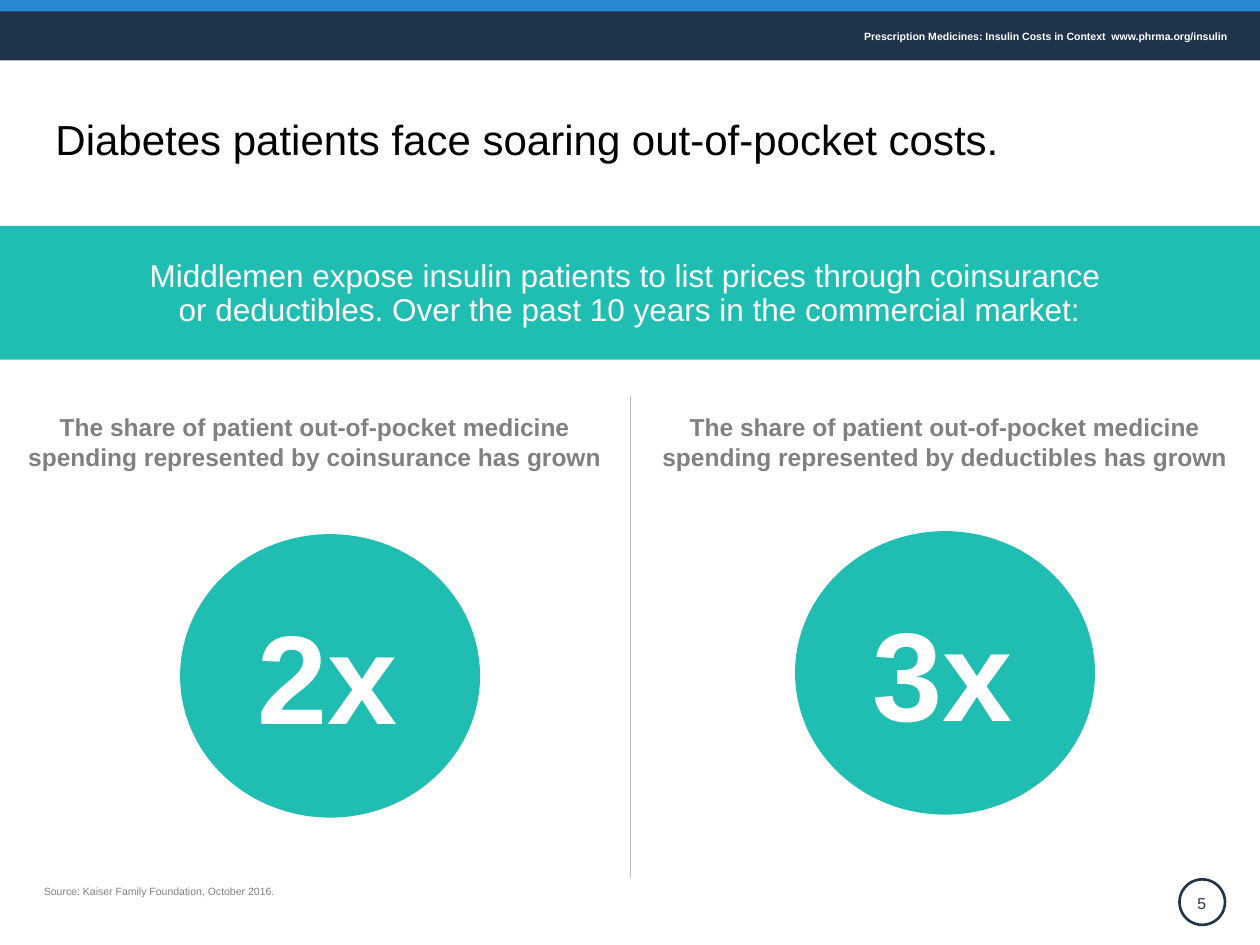
"""Build the slide on out-of-pocket insulin costs."""
import pptx
import pptx.dml.color
import pptx.enum.shapes
import pptx.enum.text
import pptx.oxml
import pptx.util

Pt = pptx.util.Pt
SHAPES = pptx.enum.shapes.MSO_SHAPE
ALIGN = pptx.enum.text.PP_ALIGN
ANCHOR = pptx.enum.text.MSO_ANCHOR

TEAL, NAVY, BLUE, WHITE, GREY = "20BDB3", "1F334A", "2B88D4", "FFFFFF", "808080"
WIDTH, HEIGHT = 720, 540
TITLE = "Diabetes patients face soaring out-of-pocket costs."
HEADER = "Prescription Medicines: Insulin Costs in Context  www.phrma.org/insulin"
MESSAGE = ("Middlemen expose insulin patients to list prices through coinsurance \n"
           "or deductibles. Over the past 10 years in the commercial market:")
SOURCE = "Source: Kaiser Family Foundation, October 2016."
BANDS = [(0, 8, BLUE), (6.5, 28, NAVY), (129, 76.5, TEAL)]
COLUMNS = [
    {"kind": "coinsurance", "growth": "2x", "circle": (102.9, 305.2)},
    {"kind": "deductibles", "growth": "3x", "circle": (454.3, 303.5)},
]
CIRCLE_WIDTH, CIRCLE_HEIGHT = 171.4, 162


def color(value):
    return pptx.dml.color.RGBColor.from_string(value)


def write(box, text, size=14, ink=GREY, bold=False, align=ALIGN.LEFT,
          anchor=ANCHOR.TOP, spacing=None):
    frame = box.text_frame
    frame.word_wrap = True
    frame.vertical_anchor = anchor
    para = frame.paragraphs[0]
    para.text = text
    para.alignment = align
    para.line_spacing = spacing
    for span in para.runs:
        span.font.name = "Arial"
        span.font.size = Pt(size)
        span.font.bold = bold
        span.font.color.rgb = color(ink)


def add_text(page, place, text, **style):
    write(page.shapes.add_textbox(*map(Pt, place)), text, **style)


def add_shape(page, kind, place, fill, line=None):
    shape = page.shapes.add_shape(kind, *map(Pt, place))
    shape.shadow.inherit = False
    shape.fill.solid()
    shape.fill.fore_color.rgb = color(fill)
    if line:
        shape.line.color.rgb = color(line)
        shape.line.width = Pt(1.5)
    else:
        shape.line.fill.background()


def add_divider(page):
    line = page.shapes.add_connector(
        pptx.enum.shapes.MSO_CONNECTOR.STRAIGHT,
        Pt(WIDTH / 2), Pt(226.5), Pt(WIDTH / 2), Pt(502))
    line.line.color.rgb = color("BFBFBF")
    line.line.width = Pt(0.5)
    effects = pptx.oxml.parse_xml(
        '<a:effectLst xmlns:a="http://schemas.openxmlformats.org/drawingml/2006/main"/>')
    line._element.spPr.append(effects)


def add_column(page, index, column):
    half = WIDTH / 2
    left, top = column["circle"]
    add_shape(page, SHAPES.OVAL, (left, top, CIRCLE_WIDTH, CIRCLE_HEIGHT), TEAL)
    add_text(page, (index * half, 232, half, 41),
             "The share of patient out-of-pocket medicine spending represented by "
             f"{column['kind']} has grown", bold=True, align=ALIGN.CENTER)
    add_text(page, (left + 34.8, top + 33, 98.6, 94.3), column["growth"],
             size=72, ink=WHITE, bold=True, align=ALIGN.CENTER)


def main():
    deck = pptx.Presentation()
    deck.slide_width, deck.slide_height = Pt(WIDTH), Pt(HEIGHT)
    page = deck.slides.add_slide(deck.slide_layouts[5])

    for top, height, fill in BANDS:
        add_shape(page, SHAPES.RECTANGLE, (0, top, WIDTH, height), fill)
    add_text(page, (486.7, 13.7, 228.3, 14.4), HEADER, size=6, ink=WHITE, bold=True)

    title = page.shapes.title
    title.left, title.top, title.width, title.height = map(Pt, (24.5, 52.5, 674.6, 57.6))
    write(title, TITLE, size=24, ink="000000", anchor=ANCHOR.MIDDLE, spacing=0.9)
    add_text(page, (25.2, 140.4, 669, 55.4), MESSAGE, size=18, ink=WHITE,
             align=ALIGN.CENTER, anchor=ANCHOR.MIDDLE, spacing=0.9)

    add_divider(page)
    for index, column in enumerate(COLUMNS):
        add_column(page, index, column)

    add_text(page, (18, 502, 150, 14.4), SOURCE, size=6)
    add_shape(page, SHAPES.OVAL, (674, 502.5, 26, 26), WHITE, line=NAVY)
    add_text(page, (668, 502, 37.5, 28.8), "5", size=9, ink=NAVY,
             align=ALIGN.CENTER, anchor=ANCHOR.MIDDLE)
    deck.save("out.pptx")


if __name__ == "__main__":
    main()
